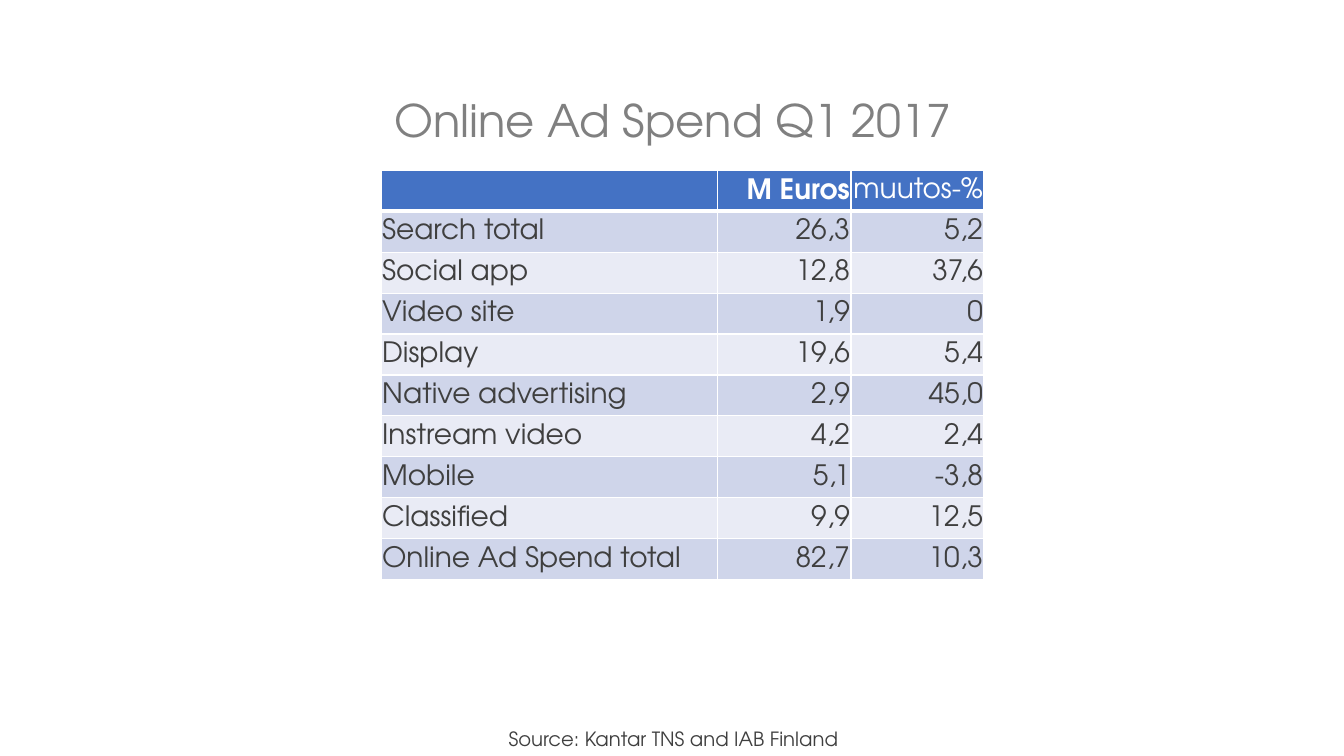
from dataclasses import dataclass

from lxml.etree import SubElement
from pptx import Presentation
from pptx.dml.color import RGBColor as RGB
from pptx.enum.shapes import MSO_SHAPE as Shape
from pptx.enum.text import MSO_ANCHOR as Anchor, MSO_AUTO_SIZE as Fit, PP_ALIGN as Align
from pptx.oxml.ns import qn
from pptx.util import Inches, Pt


@dataclass(frozen=True)
class Theme:
    font: str = "TeX Gyre Adventor"
    white: str = "FFFFFF"
    grey: str = "808080"
    ink: str = "3F3F3F"
    head: str = "4472C4"
    bands: tuple = ("E9EBF5", "CFD5EA")
    title: int = 32
    body: int = 20
    note: int = 14


THEME = Theme()
WIDTHS = (3.34, 1.32, 1.32)
ROWS = (
    ("", "M Euros", "muutos-%"),
    ("Search total", "26,3", "5,2"),
    ("Social app", "12,8", "37,6"),
    ("Video site", "1,9", "0"),
    ("Display", "19,6", "5,4"),
    ("Native advertising", "2,9", "45,0"),
    ("Instream video", "4,2", "2,4"),
    ("Mobile", "5,1", "-3,8"),
    ("Classified", "9,9", "12,5"),
    ("Online Ad Spend total", "82,7", "10,3"),
)


def box(left, top, width, height):
    return [Inches(n) for n in (left, top, width, height)]


def write(frame, text, size, color, align, bold=False):
    para = frame.paragraphs[0]
    para.alignment = align
    run = para.add_run()
    run.text = text
    font = run.font
    font.name, font.size, font.bold = THEME.font, Pt(size), bold
    font.color.rgb = RGB.from_string(color)


def add_panel(slide):
    """Put a plain white panel behind everything else."""
    panel = slide.shapes.add_shape(Shape.RECTANGLE, *box(2.88, 0.7, 7.93, 5.67))
    panel.shadow.inherit = False
    panel.fill.solid()
    panel.fill.fore_color.rgb = RGB.from_string(THEME.white)
    panel.line.color.rgb = RGB.from_string(THEME.white)
    panel.line.width = Pt(0.5)
    slide.shapes._spTree.insert(2, panel._element)


def add_title(slide, text):
    title = slide.shapes.title
    title.left, title.top, title.width, title.height = box(3.78, 0.87, 5.79, 0.64)
    frame = title.text_frame
    frame.vertical_anchor = Anchor.TOP
    frame.auto_size = Fit.SHAPE_TO_FIT_TEXT
    write(frame, text, THEME.title, THEME.grey, Align.CENTER)


def add_note(slide, text):
    frame = slide.shapes.add_textbox(*box(1.79, 7.16, 9.78, 0.34)).text_frame
    frame.word_wrap = True
    write(frame, text, THEME.note, THEME.ink, Align.CENTER)


def set_edges(cell, base):
    """Draw white borders, with the bottom one base points wide."""
    props = cell._tc.get_or_add_tcPr()
    for side, width in (("L", 1), ("R", 1), ("T", 1), ("B", base)):
        line = SubElement(props, qn(f"a:ln{side}"), w=str(Pt(width)))
        fill = SubElement(line, qn("a:solidFill"))
        SubElement(fill, qn("a:srgbClr"), val=THEME.white)


def fill_cell(cell, text, row, col):
    head = row == 0
    set_edges(cell, 3 if head else 1)
    cell.fill.solid()
    cell.fill.fore_color.rgb = RGB.from_string(THEME.head if head else THEME.bands[row % 2])
    cell.vertical_anchor = Anchor.MIDDLE
    cell.margin_left = cell.margin_right = cell.margin_top = Inches(0.01)
    cell.margin_bottom = 0
    if text:
        write(cell.text_frame, text, THEME.body, THEME.white if head else THEME.ink,
              Align.RIGHT if col else Align.LEFT, bold=head and col == 1)


def add_grid(slide):
    place = box(3.78, 1.69, sum(WIDTHS), 4.06)
    table = slide.shapes.add_table(len(ROWS), len(WIDTHS), *place).table
    for col, width in enumerate(WIDTHS):
        table.columns[col].width = Inches(width)
    for row, texts in enumerate(ROWS):
        for col, text in enumerate(texts):
            fill_cell(table.cell(row, col), text, row, col)


def main():
    deck = Presentation()
    deck.slide_width, deck.slide_height = Inches(13.33), Inches(7.5)
    slide = deck.slides.add_slide(deck.slide_layouts.get_by_name("Title Only"))
    add_panel(slide)
    add_title(slide, "Online Ad Spend Q1 2017")
    add_grid(slide)
    add_note(slide, "Source: Kantar TNS and IAB Finland")
    deck.save("out.pptx")


if __name__ == "__main__":
    main()
